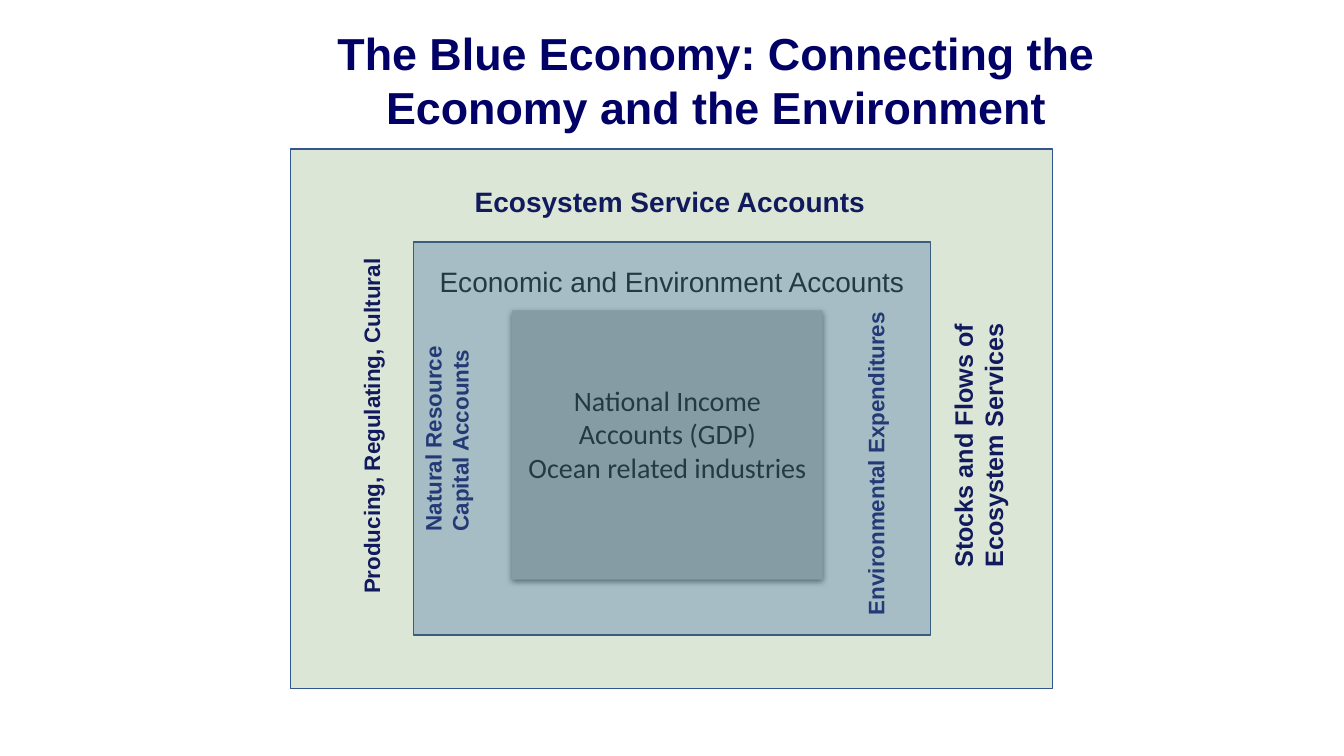
from dataclasses import dataclass

from lxml import etree
from pptx import Presentation
from pptx.dml.color import RGBColor
from pptx.enum.shapes import MSO_SHAPE as SHAPE
from pptx.enum.text import MSO_ANCHOR as ANCHOR, MSO_AUTO_SIZE as AUTO, PP_ALIGN as ALIGN
from pptx.oxml import parse_xml
from pptx.oxml.ns import nsdecls, qn
from pptx.util import Inches, Pt

COLORS = {
    "navy": "000066",
    "black": "000000",
    "gray": "BFBFBF",
    "blue": "4472C4",
    "green": "548235",
    "border": "325491",
}


@dataclass
class Label:
    lines: tuple[str, ...]
    left: float
    top: float
    width: float
    height: float
    size: int
    upright: bool = True
    bold: bool = True
    color: str = "navy"
    align: ALIGN = ALIGN.LEFT
    spacing: float = 1.0


@dataclass
class Frame:
    left: float
    top: float
    width: float
    height: float
    fill: str
    alpha: int = 100
    line: str | None = None


HEADING = Label(("The Blue Economy: Connecting the Economy and the Environment",),
                2.24, 0.2, 9.73, 1.18, 32, align=ALIGN.CENTER)
ECONOMIC = Label(("Economic and Environment Accounts",), 4.08, 2.42, 5.17, 0.59, 20,
                 bold=False, color="black", align=ALIGN.CENTER, spacing=1.45)
INCOME = Label(("National Income Accounts (GDP)", "Ocean related industries"),
               5.08, 3.08, 3.08, 2.67, 20, bold=False, color="black", align=ALIGN.CENTER)
SIDE_LABELS = [
    Label(("Natural Resource", "Capital Accounts"), 3.37, 3.99, 2.12, 0.64, 16, upright=False),
    Label(("Environmental Expenditures",), 7, 4.33, 3.37, 0.37, 16, upright=False),
    Label(("Ecosystem Service Accounts",), 4.61, 1.78, 4.1, 0.44, 20),
    Label(("Producing, Regulating, Cultural",), 1.9, 4.02, 3.57, 0.37, 16, upright=False),
    Label(("Stocks and Flows of", "Ecosystem Services"), 8.35, 4.02, 2.71, 0.71, 18, upright=False),
]
CORE = Frame(5.08, 3.08, 3.08, 2.67, "gray")
OVERLAYS = [
    Frame(4.1, 2.4, 5.13, 3.9, "blue", 36, "border"),
    Frame(2.88, 1.48, 7.56, 5.35, "green", 20, "border"),
]


def rgb(name: str) -> RGBColor:
    return RGBColor.from_string(COLORS[name])


def box(item: Label | Frame) -> tuple:
    return tuple(Inches(v) for v in (item.left, item.top, item.width, item.height))


def write(tf, label: Label, font: str = "Arial") -> None:
    for i, line in enumerate(label.lines):
        p = tf.paragraphs[0] if i == 0 else tf.add_paragraph()
        p.text = line
        p.alignment = label.align
        p.line_spacing = label.spacing
        p.font.name = font
        p.font.size = Pt(label.size)
        p.font.bold = label.bold
        p.font.color.rgb = rgb(label.color)


def add_label(slide, label: Label):
    sp = slide.shapes.add_textbox(*box(label))
    sp.rotation = 0 if label.upright else 270
    tf = sp.text_frame
    tf.word_wrap = label.align == ALIGN.CENTER
    write(tf, label)
    return sp


def add_frame(slide, frame: Frame):
    sp = slide.shapes.add_shape(SHAPE.RECTANGLE, *box(frame))
    sp.shadow.inherit = False
    sp.fill.solid()
    sp.fill.fore_color.rgb = rgb(frame.fill)
    if frame.alpha < 100:
        color = sp.fill._xPr.find(qn("a:solidFill"))[0]
        etree.SubElement(color, qn("a:alpha"), val=str(frame.alpha * 1000))
    if frame.line:
        sp.line.color.rgb = rgb(frame.line)
        sp.line.width = Pt(1)
    else:
        sp.line.fill.background()
    return sp


def add_shadow(sp) -> None:
    effects = sp._element.spPr.find(qn("a:effectLst"))
    effects.append(parse_xml(
        f'<a:outerShdw {nsdecls("a")} blurRad="{Pt(4.5)}" dist="{Pt(1.5)}" dir="5400000" '
        f'rotWithShape="0"><a:srgbClr val="{COLORS["black"]}"><a:alpha val="63000"/>'
        '</a:srgbClr></a:outerShdw>'))


def main() -> None:
    prs = Presentation()
    prs.slide_width, prs.slide_height = Inches(13.33), Inches(7.5)
    slide = prs.slides.add_slide(prs.slide_layouts[5])

    # Title
    title = slide.shapes.title
    title.left, title.top, title.width, title.height = box(HEADING)
    tf = title.text_frame
    tf.auto_size = AUTO.NONE
    tf.vertical_anchor = ANCHOR.MIDDLE
    write(tf, HEADING)

    # National income core, with its heading above
    add_label(slide, ECONOMIC)
    core = add_frame(slide, CORE)
    add_shadow(core)
    tf = core.text_frame
    tf.word_wrap = True
    tf.vertical_anchor = ANCHOR.TOP
    tf.margin_top = Inches(0.72)
    write(tf, INCOME, "Calibri")

    # Labels around the core
    for label in SIDE_LABELS:
        add_label(slide, label)

    # Translucent account boundaries lie over the labels
    for frame in OVERLAYS:
        add_frame(slide, frame)

    prs.save("out.pptx")


if __name__ == "__main__":
    main()
